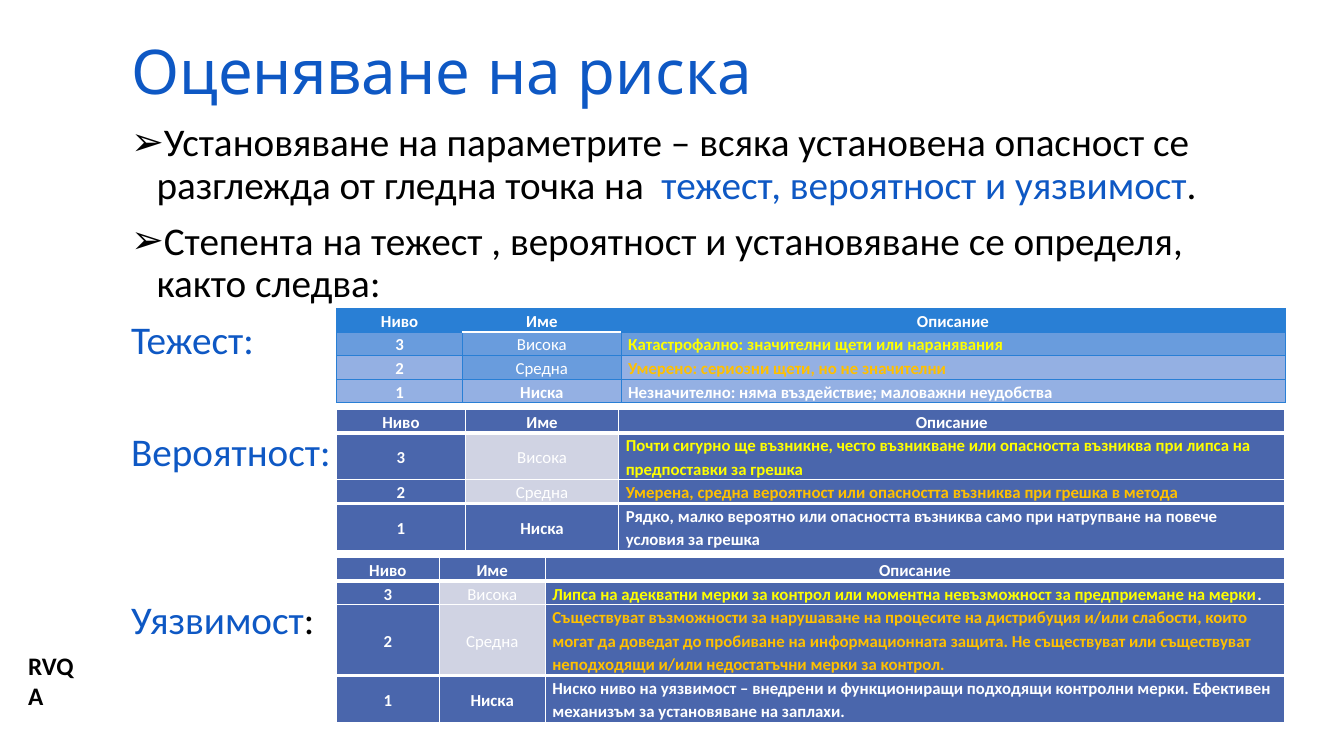
from lxml import etree
from pptx import Presentation
from pptx import util as u
from pptx.dml import color
from pptx.enum import text
from pptx.oxml import ns

Cm, Pt = u.Cm, u.Pt
COLORS = {
    "accent": "0E58C4", "black": "000000", "white": "FFFFFF", "yellow": "FFFF00",
    "amber": "FFC000", "sky": "297FD5", "sky_mid": "699CDD", "sky_light": "94B0E3",
    "navy": "4A66AC", "mist": "D0D3E3",
}
HEADERS = ("Ниво", "Име", "Описание")
LEVELS = (("3", "Висока"), ("2", "Средна"), ("1", "Ниска"))
LEVEL_COLORS = ("yellow", "amber", "white")
TABLE_LEFT = 8.48
LINE_HEIGHT = 0.59

# Each description is (text, number of lines, optional white ending).
SEVERITY = {
    "top": 7.77, "widths": (3.18, 3.99, 16.73), "border": ("sky", 0.5),
    "fills": (("sky",) * 3, ("sky_mid",) * 3,
              ("sky_light", "sky_mid", "sky_light"), ("sky_light",) * 3),
    "rules": {(0, 1): 1},
    "descriptions": (
        ("Катастрофално: значителни щети или наранявания", 1, ""),
        ("Умерено: сериозни щети, но не значителни", 1, ""),
        ("Незначително: няма въздействие; маловажни неудобства", 1, ""),
    ),
}
NAVY_GRID = {
    "border": ("white", 1),
    "fills": (("navy",) * 3, ("navy", "mist", "navy"),
              ("navy", "mist", "navy"), ("navy",) * 3),
    "rules": {(row, column): 3 for row in (0, 2) for column in range(3)},
}
PROBABILITY = {
    **NAVY_GRID, "top": 10.31, "widths": (3.25, 3.86, 16.79),
    "descriptions": (
        ("Почти сигурно ще възникне, често възникване или опасността възниква "
         "при липса на предпоставки за грешка", 2, ""),
        ("Умерена, средна вероятност или опасността възниква при грешка в метода", 1, ""),
        ("Рядко, малко вероятно или опасността възниква само при натрупване "
         "на повече условия за грешка", 2, ""),
    ),
}
VULNERABILITY = {
    **NAVY_GRID, "top": 14.05, "widths": (2.59, 2.67, 18.64),
    "descriptions": (
        ("Липса на адекватни мерки за контрол или моментна невъзможност "
         "за предприемане на мерки", 1, "."),
        ("Съществуват възможности за нарушаване на процесите на дистрибуция и/или "
         "слабости, които могат да доведат до пробиване на информационната защита. "
         "Не съществуват или съществуват неподходящи и/или недостатъчни мерки "
         "за контрол.", 3, ""),
        ("Ниско ниво на уязвимост – внедрени и функциониращи подходящи контролни "
         "мерки. Ефективен механизъм за установяване на заплахи.", 2, ""),
    ),
}
# Each item is (bulleted, space before, spans).
BODY = (
    (True, 10, (("Установяване на параметрите – всяка установена опасност се "
                 "разглежда от гледна точка на  ", "black"),
                ("тежест, вероятност и уязвимост", "accent"), (".", "black"))),
    (True, 10, (("Степента на тежест , вероятност и установяване се определя, "
                 "както следва:", "black"),)),
    (False, 10, (("Тежест:", "accent"),)),
    (False, 50, (("Вероятност:", "accent"),)),
    (False, 90, (("Уязвимост", "accent"), (":", "black"))),
)


def rgb(name):
    return color.RGBColor.from_string(COLORS[name])


def apply_format(target, values):
    for name, value in values.items():
        setattr(target, name, value)


def add_spans(para, spans, size, bold=False, font="Calibri"):
    """Append (text, colour name) spans to a paragraph."""
    for words, tint in spans:
        span = para.add_run()
        span.text = words
        apply_format(span.font, {"size": Pt(size), "bold": bold, "name": font})
        span.font.color.rgb = rgb(tint)


def place(box, left, top, width, height):
    apply_format(box, {"left": Cm(left), "top": Cm(top),
                       "width": Cm(width), "height": Cm(height)})


def set_bullet(para, bulleted):
    props = para._p.get_or_add_pPr()
    indent = Cm(0.64) if bulleted else 0
    props.set("marL", str(indent))
    props.set("indent", str(-indent))
    if bulleted:
        etree.SubElement(props, ns.qn("a:buChar"), char="➢")
    else:
        etree.SubElement(props, ns.qn("a:buNone"))


def fill_title(box):
    place(box, 3.05, 0.79, 27.94, 2.18)
    apply_format(box.text_frame, {"vertical_anchor": text.MSO_ANCHOR.MIDDLE,
                                  "auto_size": text.MSO_AUTO_SIZE.NONE})
    para = box.text_frame.paragraphs[0]
    apply_format(para, {"alignment": text.PP_ALIGN.LEFT, "line_spacing": 0.9})
    add_spans(para, [("Оценяване на риска", "accent")], 44, font="Quicksand")


def fill_body(box):
    place(box, 3.05, 2.97, 27.94, 14.5)
    frame = box.text_frame
    frame.auto_size = text.MSO_AUTO_SIZE.NONE
    for index, (bulleted, space, spans) in enumerate(BODY):
        para = frame.add_paragraph() if index else frame.paragraphs[0]
        apply_format(para, {"line_spacing": 0.9, "space_before": Pt(space)})
        set_bullet(para, bulleted)
        add_spans(para, spans, 28)


def add_border(cell, side, tint, points):
    line = etree.SubElement(cell._tc.get_or_add_tcPr(), ns.qn(f"a:ln{side}"),
                            w=str(Pt(points)))
    fill = etree.SubElement(line, ns.qn("a:solidFill"))
    etree.SubElement(fill, ns.qn("a:srgbClr"), val=COLORS[tint])


def fill_cell(cell, spans, bold, centred, space):
    apply_format(cell, {"margin_left": Cm(0.18), "margin_right": Cm(0.18),
                        "margin_top": 0, "margin_bottom": 0,
                        "vertical_anchor": text.MSO_ANCHOR.MIDDLE})
    para = cell.text_frame.paragraphs[0]
    align = text.PP_ALIGN.CENTER if centred else text.PP_ALIGN.LEFT
    apply_format(para, {"alignment": align, "line_spacing": 1.15,
                        "space_before": Pt(space), "space_after": Pt(space)})
    add_spans(para, spans, 12, bold)


def table_rows(grid):
    """Return the spans of every cell, row by row."""
    rows = [[[(header, "white")] for header in HEADERS]]
    for level, tint, (words, _, ending) in zip(LEVELS, LEVEL_COLORS, grid["descriptions"]):
        description = [(words, tint)] + ([(ending, "white")] if ending else [])
        rows.append([[(label, "white")] for label in level] + [description])
    return rows


def add_level_table(page, grid):
    lines = [1] + [count for _, count, _ in grid["descriptions"]]
    frame = page.shapes.add_table(4, 3, Cm(TABLE_LEFT), Cm(grid["top"]),
                                  Cm(sum(grid["widths"])), Cm(sum(lines) * LINE_HEIGHT))
    table = frame.table
    for column, width in zip(table.columns, grid["widths"]):
        column.width = Cm(width)
    for row, count in zip(table.rows, lines):
        row.height = Cm(count * LINE_HEIGHT)
    for r, row in enumerate(table_rows(grid)):
        for c, spans in enumerate(row):
            cell = table.cell(r, c)
            plain = c == 1 and r in (1, 2)
            fill_cell(cell, spans, not plain, r == 0 or c < 2, 1 if r else 3)
            above, below = grid["rules"].get((r - 1, c)), grid["rules"].get((r, c))
            for side, rule in (("L", None), ("R", None), ("T", above), ("B", below)):
                add_border(cell, side, *(("white", rule) if rule else grid["border"]))
            cell.fill.solid()
            cell.fill.fore_color.rgb = rgb(grid["fills"][r][c])


def add_company_label(page):
    box = page.shapes.add_textbox(Cm(0.46), Cm(16.26), Cm(1.96), Cm(1.02))
    box.text_frame.word_wrap = False
    add_spans(box.text_frame.paragraphs[0], [("RVQA", "black")], 18, bold=True)


def main():
    deck = Presentation()
    apply_format(deck, {"slide_width": Cm(33.87), "slide_height": Cm(19.05)})
    page = deck.slides.add_slide(deck.slide_layouts[1])
    fill_title(page.shapes.title)
    fill_body(page.placeholders[1])
    for grid in (SEVERITY, PROBABILITY, VULNERABILITY):
        add_level_table(page, grid)
    add_company_label(page)
    deck.save("out.pptx")


if __name__ == "__main__":
    main()
